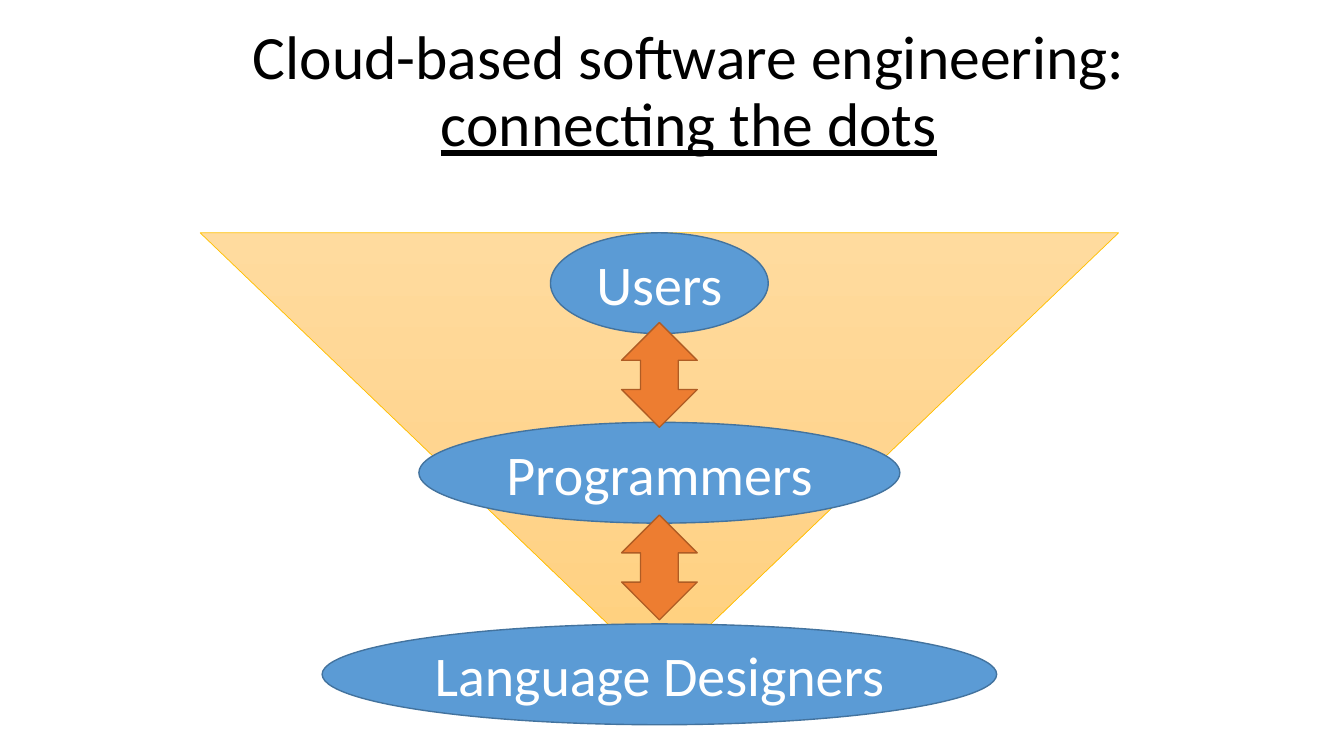
from copy import deepcopy
from pptx import Presentation
from pptx.dml.color import RGBColor
from pptx.enum.shapes import MSO_SHAPE
from pptx.enum.text import MSO_ANCHOR, PP_ALIGN
from pptx.util import Inches, Pt

OVAL = MSO_SHAPE.OVAL
ARROW = MSO_SHAPE.UP_DOWN_ARROW
FUNNEL = MSO_SHAPE.FLOWCHART_MERGE
MIDDLE = MSO_ANCHOR.MIDDLE
CENTER = PP_ALIGN.CENTER

TITLE = [("Cloud-based software engineering: ", False), ("connecting the dots", True)]
ROLES = [("Users", 2.31, 2.16), ("Programmers", 4.19, 4.77), ("Language Designers", 6.19, 6.69)]
ARROWS = [3.2, 5.11]
COLORS = {
    "black": "000000", "white": "FFFFFF", "blue": "5B9BD5", "navy": "43739E",
    "orange": "ED7D31", "rust": "AF5C24", "gold": "FFC000",
}
SHADES = [(0, "FFDB9E"), (0.5, "FFD590"), (1, "FFD07C")]
FONT = "Calibri"
MID = 6.54


def rgb(name):
    return RGBColor.from_string(COLORS[name])


def write(shape, runs, size=40, color="white", spacing=1.0):
    frame = shape.text_frame
    frame.word_wrap = True
    frame.vertical_anchor = MIDDLE
    para = frame.paragraphs[0]
    para.alignment = CENTER
    para.line_spacing = spacing
    for text, under in runs:
        run = para.add_run()
        run.text = text
        run.font.name = FONT
        run.font.size = Pt(size)
        run.font.color.rgb = rgb(color)
        run.font.underline = under


def draw(slide, kind, top, width, height, line, fill=None, weight=1):
    left = MID - width / 2
    shape = slide.shapes.add_shape(kind, Inches(left), Inches(top), Inches(width), Inches(height))
    shape.shadow.inherit = False
    shape.line.color.rgb = rgb(line)
    shape.line.width = Pt(weight)
    if fill:
        shape.fill.solid()
        shape.fill.fore_color.rgb = rgb(fill)
    return shape


def shade(shape):
    fill = shape.fill
    fill.gradient()
    fill.gradient_angle = 270
    first = shape.element.spPr.gradFill.gsLst[0]
    first.addnext(deepcopy(first))
    for stop, (place, tint) in zip(fill.gradient_stops, SHADES):
        stop.position = place
        stop.color.rgb = RGBColor.from_string(tint)


def main():
    deck = Presentation()
    deck.slide_width, deck.slide_height = Inches(13.33), Inches(7.5)
    slide = deck.slides.add_slide(deck.slide_layouts[5])

    shade(draw(slide, FUNNEL, 2.31, 9.11, 4.37, "gold", weight=0.5))

    title = slide.shapes.title
    title.left, title.top = Inches(1.08), Inches(0.2)
    title.width, title.height = Inches(11.51), Inches(1.45)
    write(title, TITLE, size=44, color="black", spacing=0.9)

    for name, top, width in ROLES:
        write(draw(slide, OVAL, top, width, 1, "navy", "blue"), [(name, False)])
    for top in ARROWS:
        draw(slide, ARROW, top, 0.75, 1.04, "rust", "orange")

    deck.save("out.pptx")


if __name__ == "__main__":
    main()
